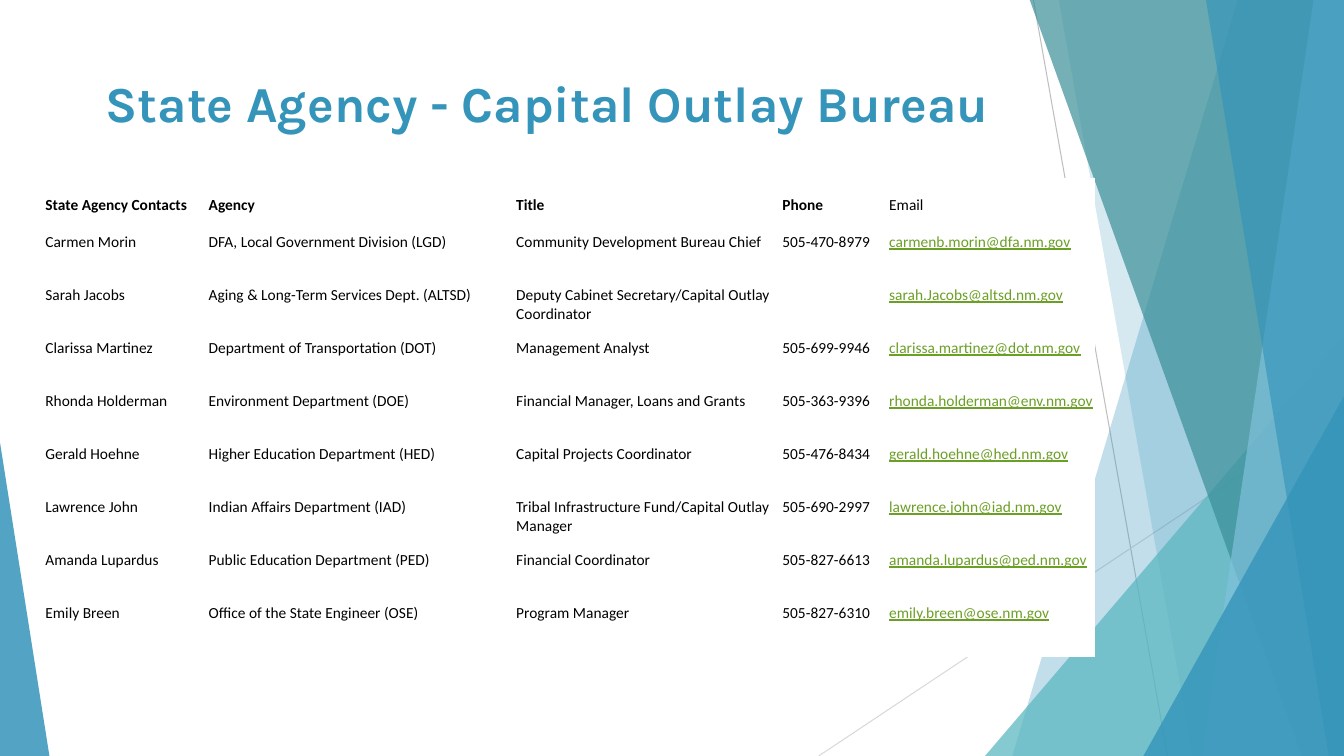
from dataclasses import dataclass

from lxml.etree import SubElement
from pptx import Presentation
from pptx.dml.color import RGBColor
from pptx.enum.shapes import MSO_CONNECTOR, MSO_SHAPE
from pptx.enum.text import MSO_ANCHOR
from pptx.oxml.ns import qn
from pptx.util import Inches, Pt


@dataclass(frozen=True)
class Theme:
    """Colours, fonts and type sizes of the slide."""
    blue: str = "3494BA"
    light_blue: str = "7FC1DB"
    teal: str = "58B6C0"
    dark_teal: str = "3A8F98"
    green: str = "6B9F25"
    black: str = "000000"
    white: str = "FFFFFF"
    gray: str = "BFBFBF"
    light_gray: str = "D9D9D9"
    title_font: str = "Karla"
    table_font: str = "Calibri"
    title_size: int = 36
    table_size: int = 11


class SlideBuilder:
    """Draws themed elements on one slide."""

    def __init__(self, slide, theme):
        self.slide = slide
        self.theme = theme

    def style_font(self, font, name, size, color, bold=False, underline=False):
        font.name = name
        font.size = Pt(size)
        font.color.rgb = RGBColor.from_string(color)
        font.bold = bold
        font.underline = underline

    def style_shape(self, shape, color, opacity):
        shape.shadow.inherit = False
        shape.line.fill.background()
        shape.fill.solid()
        shape.fill.fore_color.rgb = RGBColor.from_string(color)
        color_element = shape._element.spPr.find(qn("a:solidFill"))[0]
        SubElement(color_element, qn("a:alpha"), val=str(opacity * 1000))

    def line(self, start, end, color):
        points = [Inches(value) for value in (*start, *end)]
        connector = self.slide.shapes.add_connector(MSO_CONNECTOR.STRAIGHT, *points)
        connector.line.color.rgb = RGBColor.from_string(color)
        connector.line.width = Pt(0.75)
        SubElement(connector._element.spPr, qn("a:effectLst"))

    def band(self, top_left, bottom_left, color, opacity, right=13.33, top=-0.01, bottom=7.5):
        corners = [(top_left, top), (right, top), (right, bottom), (bottom_left, bottom)]
        points = [(Inches(x), Inches(y)) for x, y in corners]
        builder = self.slide.shapes.build_freeform(*points[0])
        builder.add_line_segments(points[1:], close=True)
        self.style_shape(builder.convert_to_shape(), color, opacity)

    def triangle(self, left, top, width, height, apex, color, opacity):
        box = [Inches(value) for value in (left, top, width, height)]
        shape = self.slide.shapes.add_shape(MSO_SHAPE.ISOSCELES_TRIANGLE, *box)
        shape.adjustments[0] = apex
        self.style_shape(shape, color, opacity)

    def title(self, text, left, top, width, height):
        box = [Inches(value) for value in (left, top, width, height)]
        frame = self.slide.shapes.add_textbox(*box).text_frame
        frame.word_wrap = True
        paragraph = frame.paragraphs[0]
        paragraph.text = text
        self.style_font(paragraph.font, self.theme.title_font, self.theme.title_size,
                        self.theme.blue, bold=True)

    def cell(self, cell, text, header, email):
        cell.fill.solid()
        cell.fill.fore_color.rgb = RGBColor.from_string(self.theme.white)
        cell.margin_left = cell.margin_right = cell.margin_top = Inches(0.01)
        cell.margin_bottom = 0
        cell.vertical_anchor = MSO_ANCHOR.MIDDLE if header else MSO_ANCHOR.TOP
        paragraph = cell.text_frame.paragraphs[0]
        paragraph.text = text
        link = email and not header
        self.style_font(paragraph.font, self.theme.table_font, self.theme.table_size,
                        self.theme.green if link else self.theme.black,
                        bold=header and not email, underline=link)

    def table(self, rows, left, top, height, column_widths):
        box = [Inches(value) for value in (left, top, sum(column_widths), height)]
        table = self.slide.shapes.add_table(len(rows), len(column_widths), *box).table
        table.first_row = table.horz_banding = False
        for column, width in zip(table.columns, column_widths):
            column.width = Inches(width)
        for row_index, row in enumerate(rows):
            for column_index, text in enumerate(row):
                self.cell(table.cell(row_index, column_index), text,
                          header=row_index == 0, email=column_index == len(row) - 1)


CONTACTS = [
    ("State Agency Contacts", "Agency", "Title", "Phone", "Email"),
    ("Carmen Morin", "DFA, Local Government Division (LGD)",
     "Community Development Bureau Chief", "505-470-8979", "carmenb.morin@dfa.nm.gov"),
    ("Sarah Jacobs", "Aging & Long-Term Services Dept. (ALTSD)",
     "Deputy Cabinet Secretary/Capital Outlay Coordinator", "", "sarah.Jacobs@altsd.nm.gov"),
    ("Clarissa Martinez", "Department of Transportation (DOT)",
     "Management Analyst", "505-699-9946", "clarissa.martinez@dot.nm.gov"),
    ("Rhonda Holderman", "Environment Department (DOE)",
     "Financial Manager, Loans and Grants", "505-363-9396", "rhonda.holderman@env.nm.gov"),
    ("Gerald Hoehne", "Higher Education Department (HED)",
     "Capital Projects Coordinator", "505-476-8434", "gerald.hoehne@hed.nm.gov"),
    ("Lawrence John", "Indian Affairs Department (IAD)",
     "Tribal Infrastructure Fund/Capital Outlay Manager", "505-690-2997",
     "lawrence.john@iad.nm.gov"),
    ("Amanda Lupardus", "Public Education Department (PED)",
     "Financial Coordinator", "505-827-6613", "amanda.lupardus@ped.nm.gov"),
    ("Emily Breen", "Office of the State Engineer (OSE)",
     "Program Manager", "505-827-6310", "emily.breen@ose.nm.gov"),
]


def main():
    theme = Theme()
    presentation = Presentation()
    presentation.slide_width = Inches(13.33)
    presentation.slide_height = Inches(7.5)
    slide = presentation.slides.add_slide(presentation.slide_layouts[6])
    builder = SlideBuilder(slide, theme)

    builder.line((10.25, 0), (11.58, 7.5), theme.gray)
    builder.line((13.33, 4.03), (8.12, 7.5), theme.light_gray)
    builder.band(12.28, 10.04, theme.blue, 30)
    builder.band(10.5, 11.83, theme.blue, 20)
    builder.triangle(9.77, 3.33, 3.56, 4.17, 1, theme.teal, 72)
    builder.band(10.21, 12.91, theme.dark_teal, 70)
    builder.band(13.03, 11.92, theme.light_blue, 70)
    builder.band(11.96, 13.18, theme.blue, 65)
    builder.triangle(11.34, 3.93, 1.99, 3.57, 1, theme.blue, 80)
    builder.triangle(0, 4.39, 0.49, 3.11, 0, theme.blue, 85)

    builder.title("State Agency - Capital Outlay Bureau", 0.95, 0.67, 9.4, 1.44)
    builder.table(CONTACTS, 0.44, 1.77, 4.74, (1.62, 3.05, 2.64, 1.06, 2.05))

    presentation.save("out.pptx")


if __name__ == "__main__":
    main()
